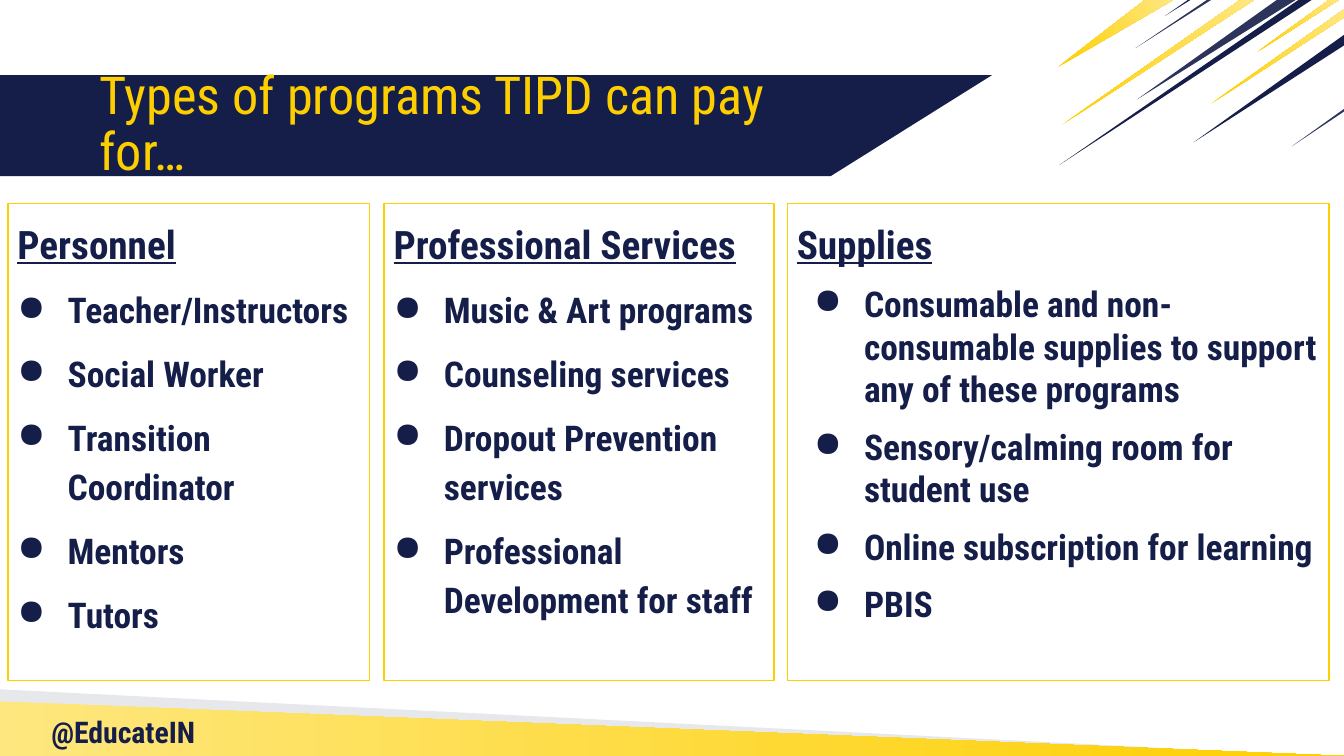
from lxml.etree import SubElement
from pptx import Presentation
from pptx.dml.color import RGBColor
from pptx.enum.shapes import MSO_SHAPE
from pptx.enum.text import MSO_ANCHOR, MSO_AUTO_SIZE, PP_ALIGN
from pptx.oxml.ns import qn
from pptx.util import Cm, Pt

NAVY = RGBColor(0x15, 0x1E, 0x49)
SLATE = RGBColor(0x2C, 0x34, 0x5B)
YELLOW = RGBColor(0xFE, 0xCF, 0x00)
PALE_YELLOW = RGBColor(0xFE, 0xE7, 0x7F)
GREY = RGBColor(0xE7, 0xE8, 0xEC)
FONT = "Roboto Condensed"


def write(paragraph, text, size=19, color=NAVY, bold=True, underline=False,
          line_spacing=1.0, space_before=0, left=0, bullet=False):
    paragraph.alignment = PP_ALIGN.LEFT
    paragraph.line_spacing = line_spacing
    paragraph.space_before = Pt(space_before)
    if bullet:
        properties = paragraph._p.get_or_add_pPr()
        properties.set("marL", str(Cm(left)))
        properties.set("indent", str(-Cm(0.95)))
        bullet_color = SubElement(properties, qn("a:buClr"))
        SubElement(bullet_color, qn("a:srgbClr"), val=str(NAVY))
        SubElement(properties, qn("a:buChar"), char="●")
    run = paragraph.add_run()
    run.text = text
    run.font.name = FONT
    run.font.size = Pt(size)
    run.font.bold = bold
    run.font.underline = underline
    run.font.color.rgb = color


def prepare_frame(shape, inset, anchor=MSO_ANCHOR.TOP):
    frame = shape.text_frame
    frame.word_wrap = True
    frame.auto_size = MSO_AUTO_SIZE.NONE
    frame.vertical_anchor = anchor
    frame.margin_left = frame.margin_right = Cm(inset)
    frame.margin_top = frame.margin_bottom = Cm(inset)
    return frame


presentation = Presentation()
presentation.slide_width = Cm(25.4)
presentation.slide_height = Cm(14.29)
slide = presentation.slides.add_slide(presentation.slide_layouts[5])

STREAK = (YELLOW, PALE_YELLOW, 35)
FOOTER = (PALE_YELLOW, YELLOW, 0)
# Points are in hundredths of a centimetre.
decorations = [
    (GREY, [(0, 1303), (0, 1429), (2261, 1417)]),
    (NAVY, [(0, 142), (0, 333), (1570, 333), (1875, 142)]),
    (STREAK, [(2375, 99), (2530, 0), (2512, 0)]),
    (NAVY, [(2002, 312), (2479, 0), (2454, 0)]),
    (STREAK, [(2164, 0), (1999, 127), (2217, 0)]),
    (STREAK, [(2540, 33), (2540, 18), (2289, 196)]),
    (SLATE, [(2449, 0), (2413, 0), (2149, 188)]),
    (NAVY, [(2256, 269), (2540, 86), (2540, 66)]),
    (SLATE, [(2540, 211), (2540, 206), (2441, 277)]),
    (NAVY, [(2202, 30), (2250, 0), (2245, 0)]),
    (STREAK, [(2007, 236), (2370, 0), (2344, 0)]),
    (SLATE, [(2146, 91), (2289, 0), (2281, 0)]),
    (FOOTER, [(0, 1326), (0, 1429), (2540, 1429)]),
]
for paint, points in decorations:
    builder = slide.shapes.build_freeform(*points[0], scale=Cm(0.01))
    builder.add_line_segments(points[1:], close=True)
    shape = builder.convert_to_shape()
    shape.shadow.inherit = False
    shape.line.fill.background()
    if paint in (STREAK, FOOTER):
        start, end, angle = paint
        shape.fill.gradient()
        shape.fill.gradient_angle = angle
        for stop, color in zip(shape.fill.gradient_stops, (start, end)):
            stop.color.rgb = color
    else:
        shape.fill.solid()
        shape.fill.fore_color.rgb = paint

handle = slide.shapes.add_textbox(Cm(0.84), Cm(13.36), Cm(5.18), Cm(0.51))
write(prepare_frame(handle, 0.13).paragraphs[0], "@EducateIN", size=16)

title = slide.shapes.title
title.left, title.top, title.width, title.height = Cm(1.7), Cm(1.42), Cm(14.63), Cm(1.91)
title.element.getparent().append(title.element)
write(prepare_frame(title, 0.18, MSO_ANCHOR.MIDDLE).paragraphs[0],
      "Types of programs TIPD can pay for…",
      size=28, color=YELLOW, bold=False, line_spacing=0.9)

columns = [
    (0.15, 6.83, 0.95, 1.15, "Personnel",
     ["Teacher/Instructors", "Social Worker", "Transition Coordinator",
      "Mentors", "Tutors"]),
    (7.26, 7.37, 0.95, 1.15, "Professional Services",
     ["Music & Art programs", "Counseling services",
      "Dropout Prevention services", "Professional Development for staff"]),
    (14.88, 10.24, 1.27, 1.0, "Supplies",
     ["Consumable and non-consumable supplies to support any of these programs",
      "Sensory/calming room for student use",
      "Online subscription for learning", "PBIS"]),
]
for left, width, indent, spacing, heading, items in columns:
    box = slide.shapes.add_shape(MSO_SHAPE.RECTANGLE, Cm(left), Cm(3.85), Cm(width), Cm(9.02))
    box.shadow.inherit = False
    box.fill.background()
    box.line.color.rgb = YELLOW
    box.line.width = Pt(0.75)
    frame = prepare_frame(box, 0.18)
    write(frame.paragraphs[0], heading, size=21, underline=True, line_spacing=1.15)
    for item in items:
        write(frame.add_paragraph(), item, line_spacing=spacing,
              space_before=8, left=indent, bullet=True)

presentation.save("out.pptx")
